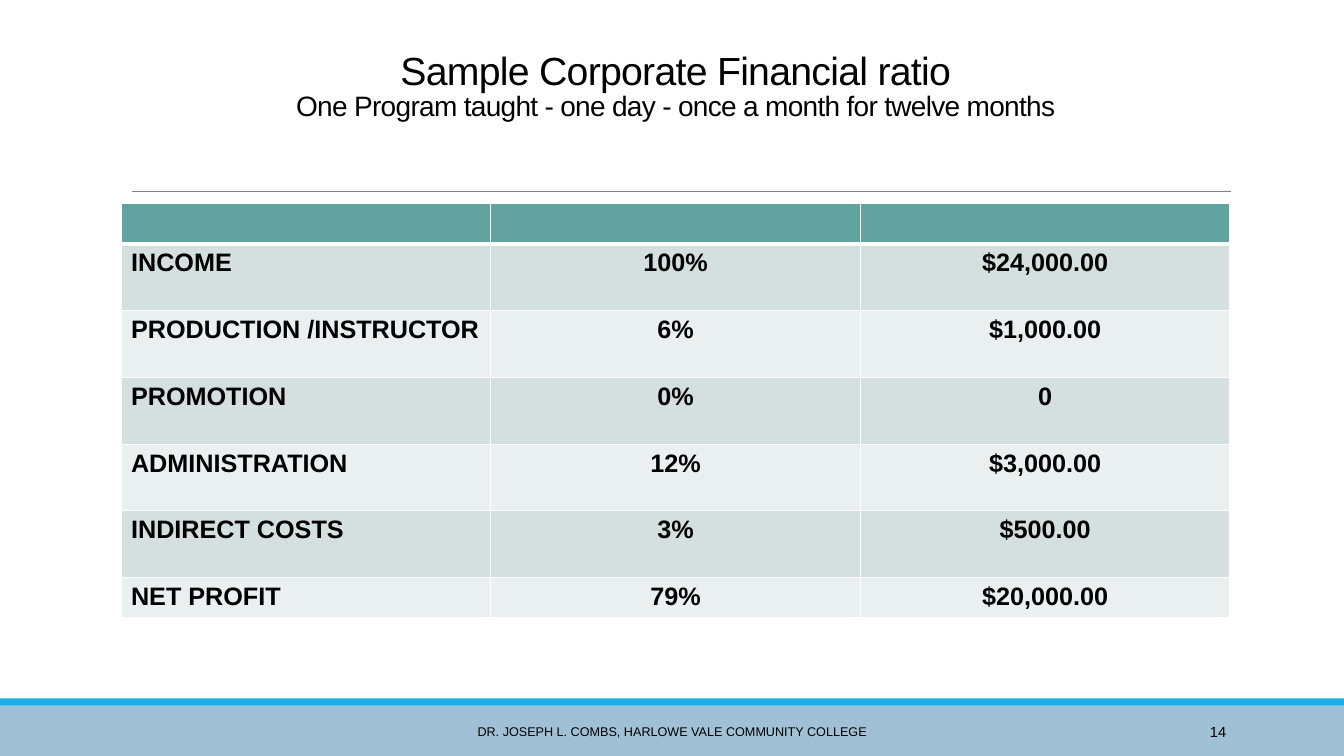
import pptx
import pptx.util
import pptx.dml.color
import pptx.enum.shapes
import pptx.enum.text
import pptx.oxml.ns
from lxml import etree

Inches = pptx.util.Inches
Pt = pptx.util.Pt
qn = pptx.oxml.ns.qn
ALIGN = pptx.enum.text.PP_ALIGN
ANCHOR = pptx.enum.text.MSO_ANCHOR

COLORS = {
    "text": "000000",
    "band": "A0C1D5",
    "stripe": "1CADE4",
    "rule": "808080",
    "header": "62A39F",
    "odd": "D3E0DF",
    "even": "EAF0F0",
    "border": "FFFFFF",
}

ROWS = [
    ("", "", ""),
    ("INCOME", "100%", "$24,000.00"),
    ("PRODUCTION /INSTRUCTOR", "6%", "$1,000.00"),
    ("PROMOTION", "0%", "0"),
    ("ADMINISTRATION", "12%", "$3,000.00"),
    ("INDIRECT COSTS", "3%", "$500.00"),
    ("NET PROFIT", "79%", "$20,000.00"),
]


def rgb(name):
    """Return the named colour."""
    return pptx.dml.color.RGBColor.from_string(COLORS[name])


def add_text(p, text, size=18, bold=False, align=ALIGN.CENTER, spacing=None):
    """Add a formatted run to a paragraph."""
    p.alignment = align
    r = p.add_run()
    r.text = text
    r.font.name = "Arial"
    r.font.size = Pt(size)
    r.font.bold = bold
    r.font.color.rgb = rgb("text")
    if spacing is not None:
        r.font._element.set("spc", str(int(spacing * 100)))


def add_bar(s, x, y, w, h, color):
    """Add a plain filled rectangle."""
    sp = s.shapes.add_shape(pptx.enum.shapes.MSO_SHAPE.RECTANGLE,
                            Inches(x), Inches(y), Inches(w), Inches(h))
    sp.shadow.inherit = False
    sp.fill.solid()
    sp.fill.fore_color.rgb = rgb(color)
    sp.line.fill.background()


def add_label(s, x, y, w, h, text, size, align):
    """Add a one-line text box centred vertically."""
    tf = s.shapes.add_textbox(Inches(x), Inches(y), Inches(w), Inches(h)).text_frame
    tf.word_wrap = True
    tf.vertical_anchor = ANCHOR.MIDDLE
    add_text(tf.paragraphs[0], text, size=size, align=align)


def add_footer(s, x, y, w, h):
    """Draw the footer band with its stripe, author and slide number."""
    stripe = 0.07
    add_bar(s, x, y + stripe, w, h - stripe, "band")
    add_bar(s, x, y, w, stripe, "stripe")
    add_label(s, x + 4.03, y + 0.13, 5.27, 0.4,
              "DR. JOSEPH L. COMBS, HARLOWE VALE COMMUNITY COLLEGE", 9, ALIGN.CENTER)
    add_label(s, x + 10.83, y + 0.13, 1.43, 0.4, "14", 10.5, ALIGN.RIGHT)


def add_heading(s, x, y, w, h):
    """Fill the title placeholder and draw the rule below it."""
    sp = s.shapes.title
    sp.left, sp.top, sp.width, sp.height = Inches(x), Inches(y), Inches(w), Inches(h)
    tf = sp.text_frame
    tf.word_wrap = True
    tf.auto_size = pptx.enum.text.MSO_AUTO_SIZE.NONE
    tf.vertical_anchor = ANCHOR.BOTTOM
    p = tf.paragraphs[0]
    p.line_spacing = 0.85
    add_text(p, "Sample Corporate Financial ratio", size=28, spacing=-0.5)
    p.add_line_break()
    etree.SubElement(p._p.find(qn("a:br")), qn("a:rPr"), sz="2800")
    add_text(p, "One Program taught - one day - once a month for twelve months",
             size=20, spacing=-0.5)
    rule_y = Inches(y + h + 0.64)
    rule = s.shapes.add_connector(pptx.enum.shapes.MSO_CONNECTOR.STRAIGHT,
                                  Inches(x + 0.11), rule_y, Inches(x + w + 0.01), rule_y)
    rule.line.color.rgb = rgb("rule")
    rule.line.width = Pt(0.5)
    etree.SubElement(rule._element.spPr, qn("a:effectLst"))


def set_borders(cell, widths):
    """Give a cell solid borders, with widths in points by side."""
    tcPr = cell._tc.get_or_add_tcPr()
    for side, width in widths.items():
        ln = etree.SubElement(tcPr, qn("a:ln" + side), w=str(Pt(width)))
        fill = etree.SubElement(ln, qn("a:solidFill"))
        etree.SubElement(fill, qn("a:srgbClr"), val=COLORS["border"])


def add_ratio_table(s, x, y, w, h):
    """Draw the ratio table with short first and last rows."""
    tbl = s.shapes.add_table(len(ROWS), len(ROWS[0]), Inches(x), Inches(y),
                             Inches(w), Inches(h)).table
    last = len(ROWS) - 1
    short = 0.4
    tall = (h - 2 * short) / (last - 1)
    for i, row in enumerate(ROWS):
        tbl.rows[i].height = Inches(short if i in (0, last) else tall)
        color = "header" if i == 0 else "odd" if i % 2 else "even"
        for j, text in enumerate(row):
            cell = tbl.cell(i, j)
            set_borders(cell, {"L": 1, "R": 1, "T": 3 if i == 1 else 1,
                               "B": 3 if i == 0 else 1})
            cell.fill.solid()
            cell.fill.fore_color.rgb = rgb(color)
            if text:
                add_text(cell.text_frame.paragraphs[0], text, bold=True,
                         align=ALIGN.CENTER if j else ALIGN.LEFT)


def main():
    """Build the slide and save it."""
    prs = pptx.Presentation()
    prs.slide_width, prs.slide_height = Inches(13.33), Inches(7.5)
    s = prs.slides.add_slide(prs.slide_layouts[5])
    add_footer(s, 0, 6.93, 13.33, 0.57)
    add_heading(s, 1.2, 0.31, 11, 0.95)
    add_ratio_table(s, 1.2, 2.02, 11, 4.11)
    prs.save("out.pptx")


if __name__ == "__main__":
    main()
